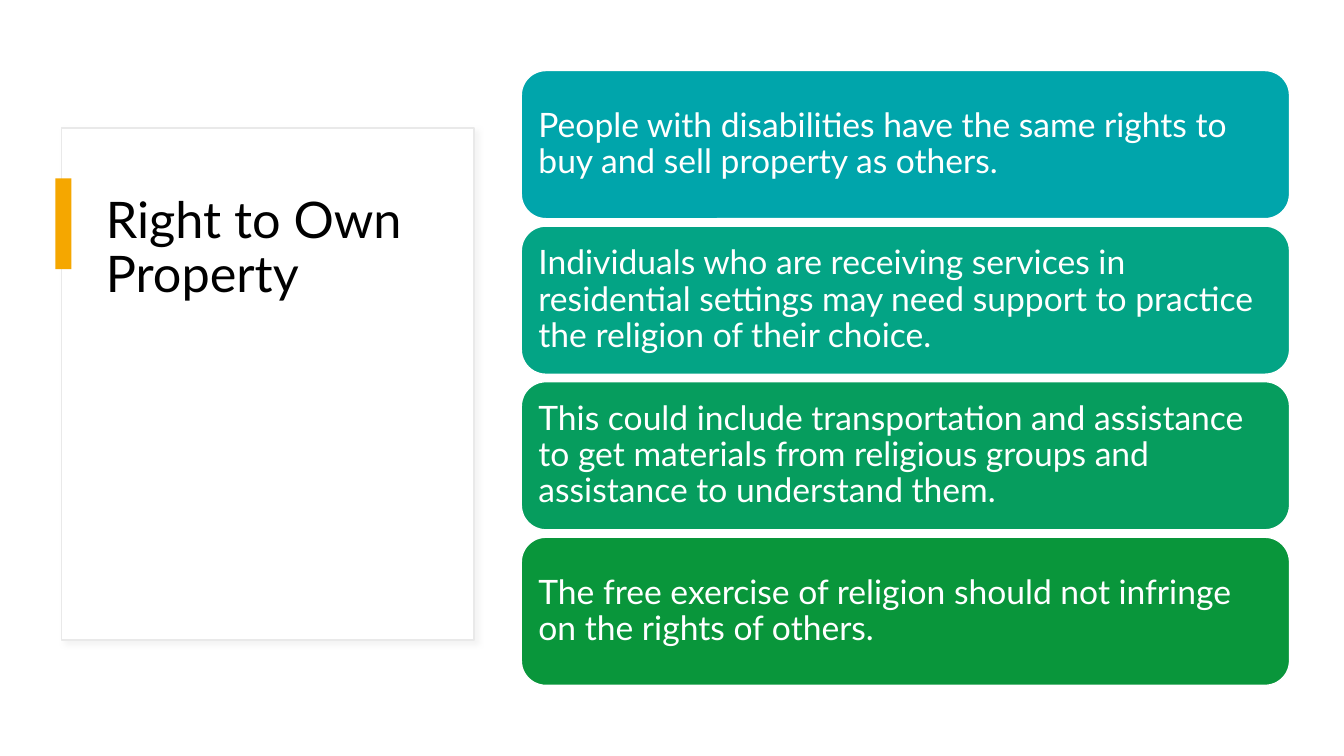
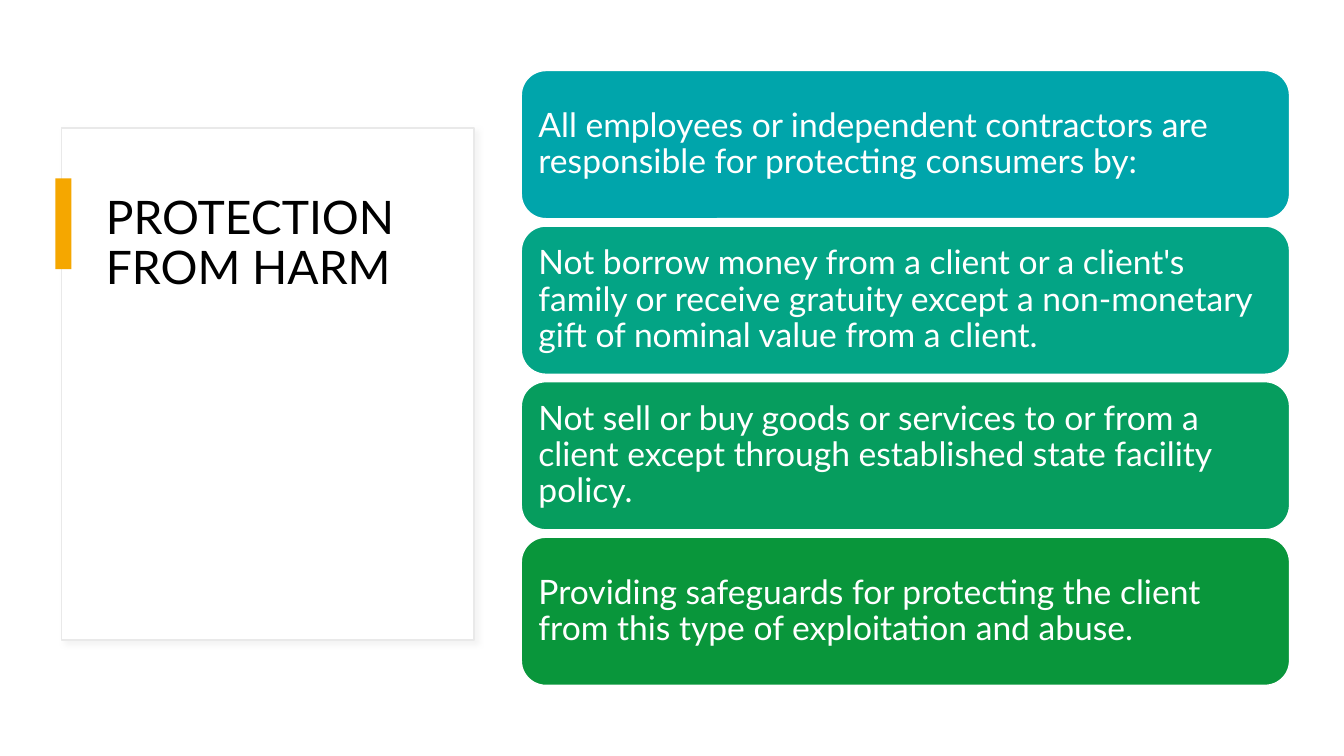
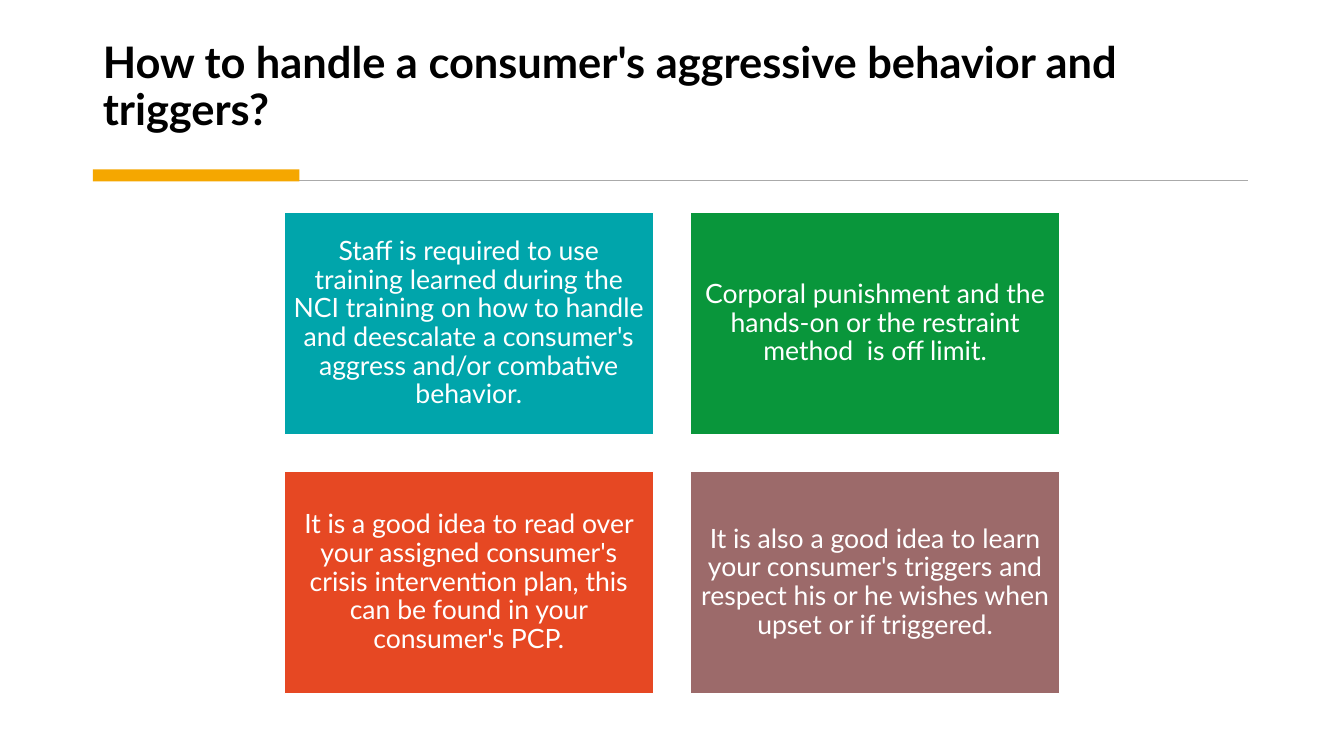
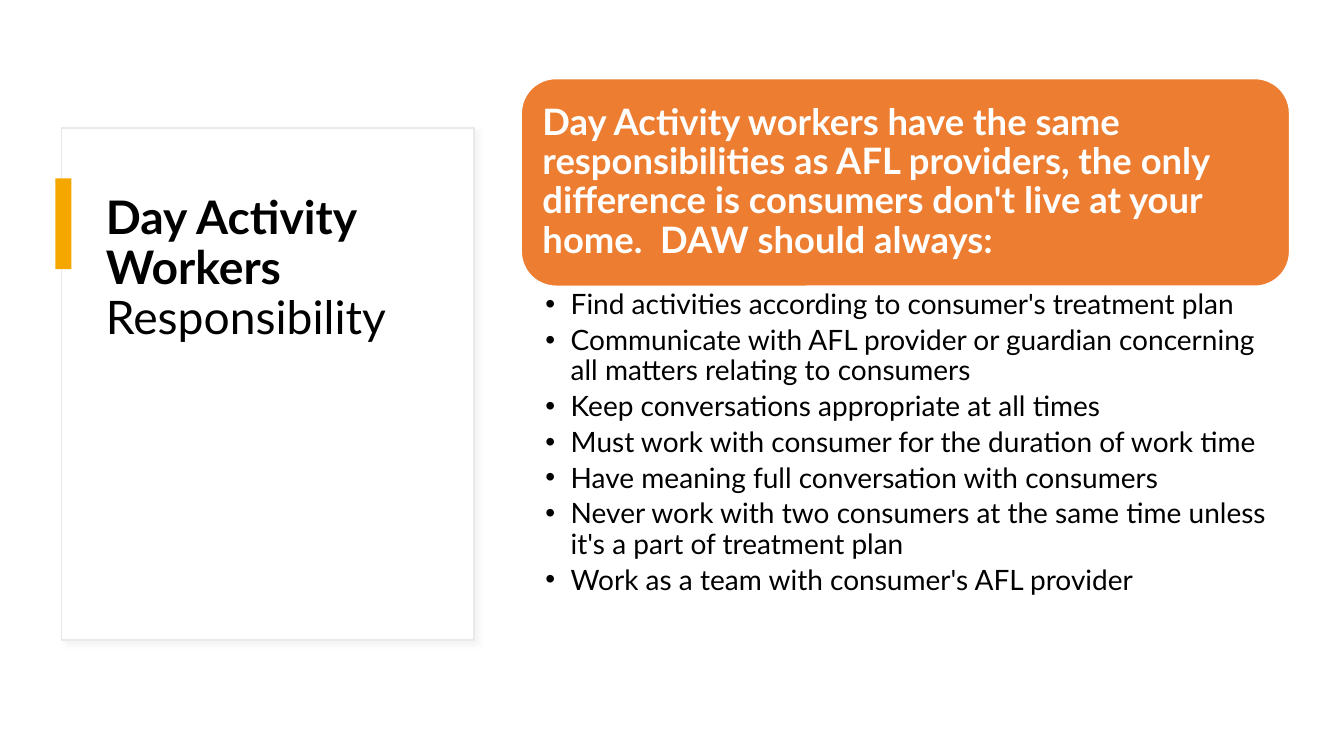
import pptx
import pptx.dml.color
import pptx.enum.shapes
import pptx.enum.text
import pptx.oxml
import pptx.oxml.ns
import pptx.util

Inches, Pt = pptx.util.Inches, pptx.util.Pt
SHAPES = pptx.enum.shapes.MSO_SHAPE
ANCHOR = pptx.enum.text.MSO_ANCHOR
ALIGN = pptx.enum.text.PP_ALIGN

FONT = "Lato"
BLACK, WHITE, ACCENT = "000000", "FFFFFF", "F5A700"
PANEL_LINE, RULE = "E9E9E9", "AAAAAA"
CARD_COLORS = ["00A5AB", "03A485", "069D5E", "09963B"]
GRID_COLORS = ["00A5AB", "09963B", "E64823", "9C6A6A"]
CALLOUT_COLOR = "ED7D31"

CONTENT_LEFT, CONTENT_WIDTH = 5.17, 7.62

CARD_SLIDES = [
    ("Right to Own Property", 36, [
        "People with disabilities have the same rights to buy and sell property as others.",
        "Individuals who are receiving services in residential settings may need support "
        "to practice the religion of their choice.",
        "This could include transportation and assistance to get materials from religious "
        "groups and assistance to understand them.",
        "The free exercise of religion should not infringe on the rights of others.",
    ]),
    ("PROTECTION FROM HARM", 33, [
        "All employees or independent contractors are responsible for protecting consumers by:",
        "Not borrow money from a client or a client's family or receive gratuity except "
        "a non-monetary gift of nominal value from a client.",
        "Not sell or buy goods or services to or from a client except through established "
        "state facility policy.",
        "Providing safeguards for protecting the client from this type of exploitation "
        "and abuse.",
    ]),
]

GRID_TITLE = "How to handle a consumer's aggressive behavior and triggers?"
GRID_TEXTS = [
    "Staff is required to use training learned during the NCI training on how to handle "
    "and deescalate a consumer's aggress and/or combative behavior.",
    "Corporal punishment and the hands-on or the restraint method  is off limit.",
    "It is a good idea to read over your assigned consumer's crisis intervention plan, "
    "this can be found in your consumer's PCP.",
    "It is also a good idea to learn your consumer's triggers and respect his or he "
    "wishes when upset or if triggered.",
]

DUTY_TITLE = [("Day Activity Workers ", True), ("Responsibility", False)]
DUTY_CALLOUT = ("Day Activity workers have the same responsibilities as AFL providers, the only "
                "difference is consumers don't live at your home.  DAW should always:")
DUTIES = [
    "Find activities according to consumer's treatment plan",
    "Communicate with AFL provider or guardian concerning all matters relating to consumers",
    "Keep conversations appropriate at all times",
    "Must work with consumer for the duration of work time",
    "Have meaning full conversation with consumers",
    "Never work with two consumers at the same time unless it's a part of treatment plan",
    "Work as a team with consumer's AFL provider",
]


def color(value):
    return pptx.dml.color.RGBColor.from_string(value)


def set_frame(frame, insets, anchor):
    frame.word_wrap = True
    frame.auto_size = pptx.enum.text.MSO_AUTO_SIZE.NONE
    frame.vertical_anchor = anchor
    (frame.margin_left, frame.margin_top,
     frame.margin_right, frame.margin_bottom) = map(Inches, insets)


def write(paragraph, runs, size, text_color, align=ALIGN.LEFT):
    """Fill a paragraph from (text, bold) pairs."""
    paragraph.alignment = align
    paragraph.line_spacing = 0.9
    for text, bold in runs:
        run = paragraph.add_run()
        run.text = text
        run.font.name = FONT
        run.font.size = Pt(size)
        run.font.bold = bold
        run.font.color.rgb = color(text_color)


def add_box(slide, kind, place, fill, line=None):
    shape = slide.shapes.add_shape(kind, *map(Inches, place))
    shape.shadow.inherit = False
    shape.fill.solid()
    shape.fill.fore_color.rgb = color(fill)
    if line:
        shape.line.color.rgb = color(line)
        shape.line.width = Pt(1)
    else:
        shape.line.fill.background()
    return shape


def add_card(slide, kind, place, fill, text, size, inset, align=ALIGN.LEFT, bold=False):
    card = add_box(slide, kind, place, fill, WHITE)
    set_frame(card.text_frame, [inset] * 4, ANCHOR.MIDDLE)
    write(card.text_frame.paragraphs[0], [(text, bold)], size, WHITE, align)


def add_titled_slide(presentation, place, runs, size, anchor):
    slide = presentation.slides.add_slide(presentation.slide_layouts[5])
    title = slide.shapes.title
    title.left, title.top, title.width, title.height = map(Inches, place)
    set_frame(title.text_frame, (0.1, 0.05, 0.1, 0.05), anchor)
    write(title.text_frame.paragraphs[0], runs, size, BLACK)
    return slide


def add_soft_shadow(shape):
    effects = shape._element.spPr.find(pptx.oxml.ns.qn("a:effectLst"))
    effects.append(pptx.oxml.parse_xml(
        f'<a:outerShdw {pptx.oxml.ns.nsdecls("a")} blurRad="{Pt(4)}" dist="{Pt(3)}" '
        'dir="2700000" algn="tl" rotWithShape="0"><a:srgbClr val="D9D9D9">'
        '<a:alpha val="30000"/></a:srgbClr></a:outerShdw>'))


def add_panel_slide(presentation, runs, size):
    """Add a slide whose title stands in a framed panel on the left."""
    slide = add_titled_slide(presentation, (0.95, 1.88, 3.39, 3.85), runs, size, ANCHOR.TOP)
    panel = add_box(slide, SHAPES.RECTANGLE, (0.61, 1.27, 4.09, 5.08), WHITE, PANEL_LINE)
    add_soft_shadow(panel)
    slide.shapes.title._element.addprevious(panel._element)
    add_box(slide, SHAPES.RECTANGLE, (0.55, 1.77, 0.16, 0.9), ACCENT)
    return slide


def add_card_slide(presentation, title, title_size, texts):
    slide = add_panel_slide(presentation, [(title, False)], title_size)
    top, bottom, height = 0.7, 6.8, 1.47
    step = (bottom - top - height) / (len(texts) - 1)
    for row, (text, fill) in enumerate(zip(texts, CARD_COLORS)):
        place = (CONTENT_LEFT, top + row * step, CONTENT_WIDTH, height)
        add_card(slide, SHAPES.ROUNDED_RECTANGLE, place, fill, text, 24, 0.1)


def add_grid_slide(presentation):
    slide = add_titled_slide(presentation, (0.92, 0.28, 11.49, 1.11),
                             [(GRID_TITLE, True)], 31, ANCHOR.BOTTOM)
    rule = slide.shapes.add_connector(
        pptx.enum.shapes.MSO_CONNECTOR.STRAIGHT,
        *map(Inches, (0.95, 1.79, 12.38, 1.79)))
    rule.line.color.rgb = color(RULE)
    rule.line.width = Pt(1.25)
    rule._element.spPr.append(pptx.oxml.parse_xml(
        f'<a:effectLst {pptx.oxml.ns.nsdecls("a")}/>'))
    add_box(slide, SHAPES.RECTANGLE, (0.92, 1.68, 2.05, 0.12), ACCENT)

    left, top, width, height, gap = 2.82, 2.11, 3.66, 2.2, 0.37
    for index, (text, fill) in enumerate(zip(GRID_TEXTS, GRID_COLORS)):
        row, column = divmod(index, 2)
        place = (left + column * (width + gap), top + row * (height + gap), width, height)
        add_card(slide, SHAPES.RECTANGLE, place, fill, text, 19, 0.08, ALIGN.CENTER)


def add_bullet(paragraph):
    properties = paragraph._p.get_or_add_pPr()
    properties.set("marL", str(Inches(0.25)))
    properties.set("indent", str(Inches(-0.25)))
    namespace = pptx.oxml.ns.nsdecls("a")
    properties.append(pptx.oxml.parse_xml(f'<a:buFont {namespace} typeface="Arial"/>'))
    properties.append(pptx.oxml.parse_xml(f'<a:buChar {namespace} char="•"/>'))


def add_duty_slide(presentation):
    slide = add_panel_slide(presentation, DUTY_TITLE, 33)
    top, height = 0.78, 2.06
    add_card(slide, SHAPES.ROUNDED_RECTANGLE, (CONTENT_LEFT, top, CONTENT_WIDTH, height),
             CALLOUT_COLOR, DUTY_CALLOUT, 26, 0.11, bold=True)
    duty_list = slide.shapes.add_textbox(
        *map(Inches, (CONTENT_LEFT, top + height, CONTENT_WIDTH, 3.88)))
    frame = duty_list.text_frame
    set_frame(frame, (0.24, 0.04, 0.2, 0.04), ANCHOR.TOP)
    for index, duty in enumerate(DUTIES):
        paragraph = frame.add_paragraph() if index else frame.paragraphs[0]
        add_bullet(paragraph)
        paragraph.space_after = Pt(4)
        write(paragraph, [(duty, False)], 20, BLACK)


def main():
    presentation = pptx.Presentation()
    presentation.slide_width, presentation.slide_height = Inches(13.33), Inches(7.5)
    for title, title_size, texts in CARD_SLIDES:
        add_card_slide(presentation, title, title_size, texts)
    add_grid_slide(presentation)
    add_duty_slide(presentation)
    presentation.save("out.pptx")


if __name__ == "__main__":
    main()
